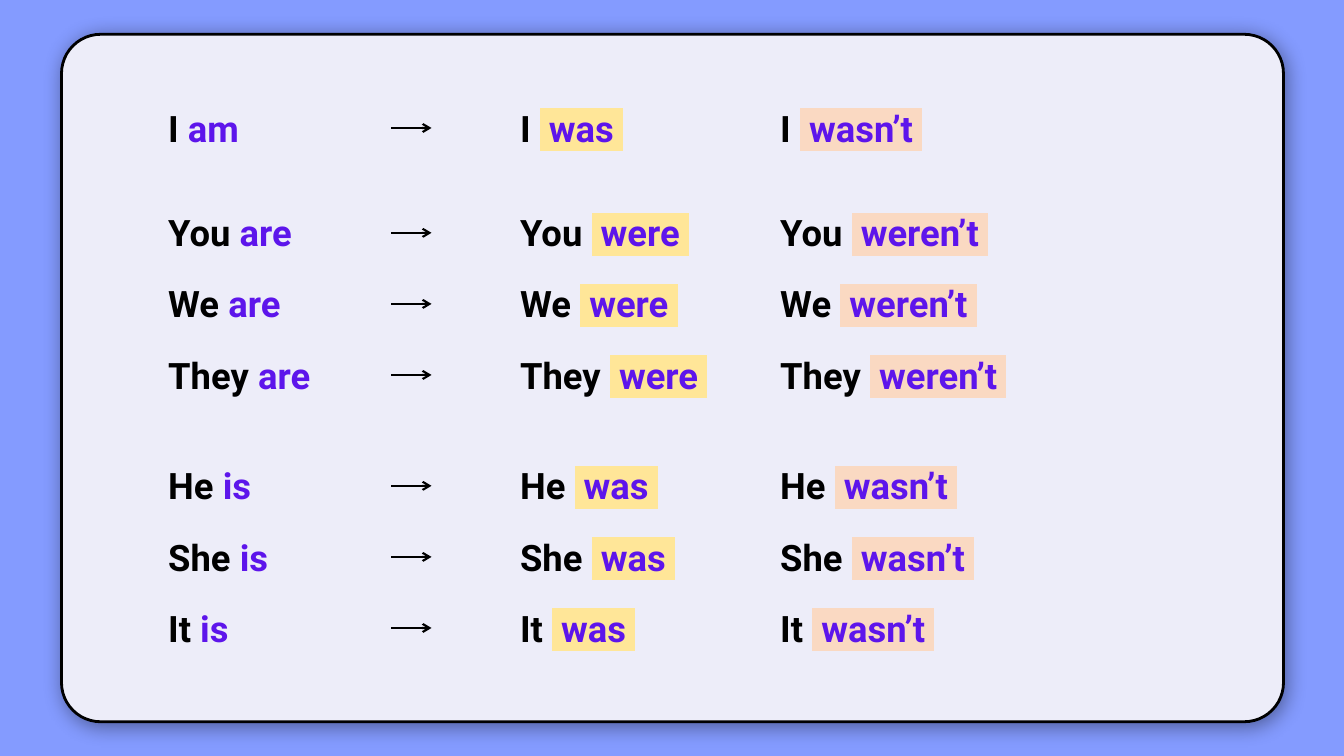
from lxml import etree
from pptx import Presentation
from pptx.dml.color import RGBColor
from pptx.enum.shapes import MSO_CONNECTOR, MSO_SHAPE
from pptx.oxml.ns import qn
from pptx.util import Inches, Pt

ROUNDED = MSO_SHAPE.ROUNDED_RECTANGLE
STRAIGHT = MSO_CONNECTOR.STRAIGHT
COLORS = {
    "background": "849BFF",
    "panel": "EDEDF9",
    "ink": "000000",
    "verb": "5D15EB",
    "positive": "FFE698",
    "negative": "FAD9C2",
}
SLIDE_WIDTH, SLIDE_HEIGHT = 13.33, 7.5
PANEL = (0.61, 0.34, 12.12, 6.82)
PRESENT_X, ARROW_X, PAST_X, NEGATIVE_X = 0.96, 3.27, 4.45, 7.03
ROW_PITCH, ROW_HEIGHT = 0.705, 0.54
ARROW_LENGTH = 0.4
GROUPS = [
    (0.66, "was", [("I", "am")]),
    (1.7, "were", [("You", "are"), ("We", "are"), ("They", "are")]),
    (4.21, "was", [("He", "is"), ("She", "is"), ("It", "is")]),
]


def rgb(name):
    return RGBColor.from_string(COLORS[name])


def add_color(parent, tag, name):
    holder = etree.SubElement(parent, qn(tag))
    return etree.SubElement(holder, qn("a:srgbClr"), val=COLORS[name])


def add_panel(slide, box):
    panel = slide.shapes.add_shape(ROUNDED, *map(Inches, box))
    panel.adjustments[0] = 0.057
    panel.fill.solid()
    panel.fill.fore_color.rgb = rgb("panel")
    panel.line.color.rgb = rgb("ink")
    panel.line.width = Pt(2)
    panel.shadow.inherit = False
    effects = panel._element.spPr.find(qn("a:effectLst"))
    color = add_color(effects, "a:outerShdw", "ink")
    etree.SubElement(color, qn("a:alpha"), val="40000")
    shadow = color.getparent()
    shadow.set("blurRad", str(Pt(15)))
    shadow.set("dist", str(Pt(3)))
    shadow.set("dir", str(45 * 60000))
    shadow.set("algn", "tl")
    shadow.set("rotWithShape", "0")


def add_run(paragraph, text, color, highlight=None):
    run = paragraph.add_run()
    run.text = text
    run.font.size = Pt(26)
    run.font.bold = True
    run.font.name = "Roboto"
    run.font.color.rgb = rgb(color)
    if highlight:
        properties = run._r.get_or_add_rPr()
        marker = add_color(properties, "a:highlight", highlight).getparent()
        properties.find(qn("a:solidFill")).addnext(marker)


def add_phrase(slide, left, top, width, pronoun, verb, highlight=None):
    box = slide.shapes.add_textbox(
        Inches(left), Inches(top), Inches(width), Inches(ROW_HEIGHT))
    box.text_frame.word_wrap = True
    paragraph = box.text_frame.paragraphs[0]
    add_run(paragraph, pronoun + " ", "ink")
    if highlight:
        add_run(paragraph, " ", "ink", highlight)
        add_run(paragraph, verb + " ", "verb", highlight)
    else:
        add_run(paragraph, verb, "verb")


def add_arrow(slide, left, middle):
    arrow = slide.shapes.add_connector(
        STRAIGHT, Inches(left), Inches(middle), Inches(left + ARROW_LENGTH), Inches(middle))
    arrow.line.color.rgb = rgb("ink")
    arrow.line.width = Pt(1.5)
    etree.SubElement(arrow.line._get_or_add_ln(), qn("a:tailEnd"), type="arrow")
    etree.SubElement(arrow._element.spPr, qn("a:effectLst"))


def add_conjugation(slide, box):
    left, top, _, _ = box
    for offset, past, rows in GROUPS:
        for index, (pronoun, present) in enumerate(rows):
            row_top = top + offset + index * ROW_PITCH
            add_phrase(slide, left + PRESENT_X, row_top, 2.2, pronoun, present)
            add_arrow(slide, left + ARROW_X, row_top + ROW_HEIGHT / 2)
            add_phrase(slide, left + PAST_X, row_top, 2.5, pronoun, past, "positive")
            add_phrase(slide, left + NEGATIVE_X, row_top, 3, pronoun, past + "n’t", "negative")


def main():
    presentation = Presentation()
    presentation.slide_width = Inches(SLIDE_WIDTH)
    presentation.slide_height = Inches(SLIDE_HEIGHT)
    slide = presentation.slides.add_slide(presentation.slide_layouts[6])
    slide.background.fill.solid()
    slide.background.fill.fore_color.rgb = rgb("background")
    add_panel(slide, PANEL)
    add_conjugation(slide, PANEL)
    presentation.save("out.pptx")


if __name__ == "__main__":
    main()
